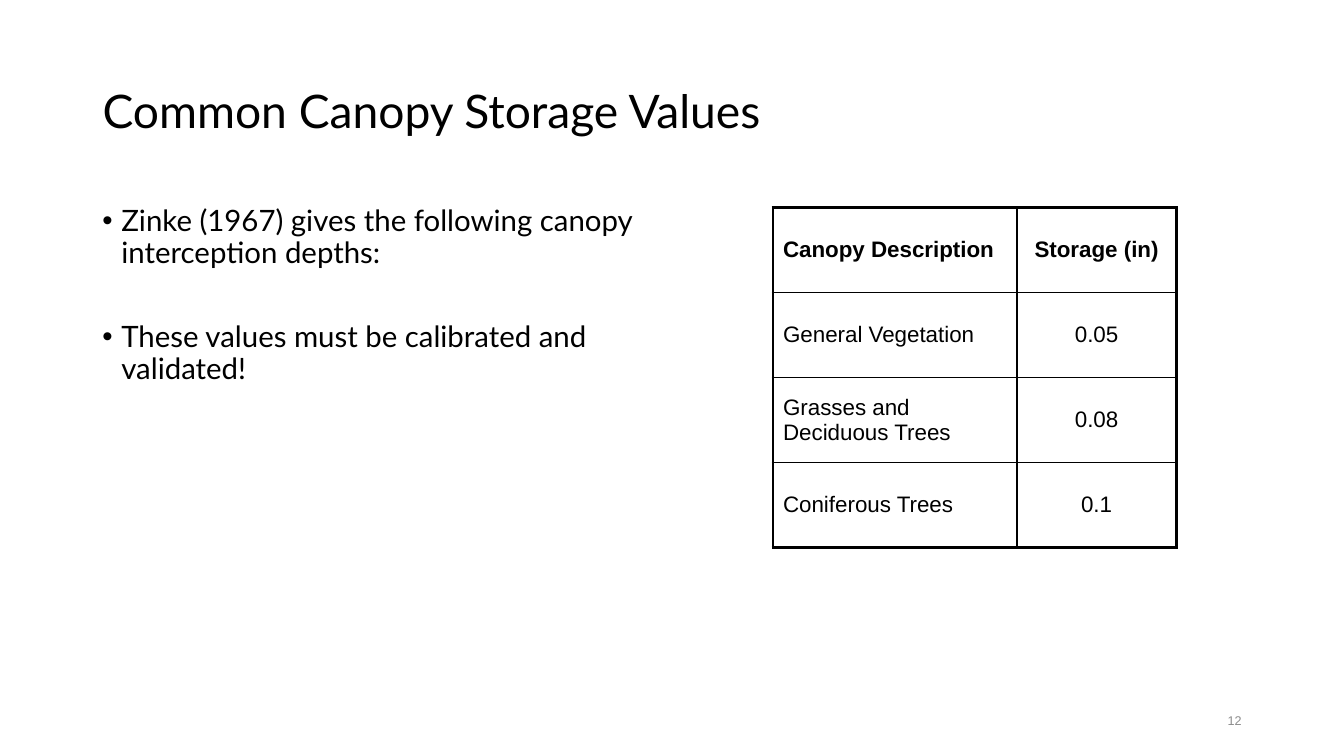
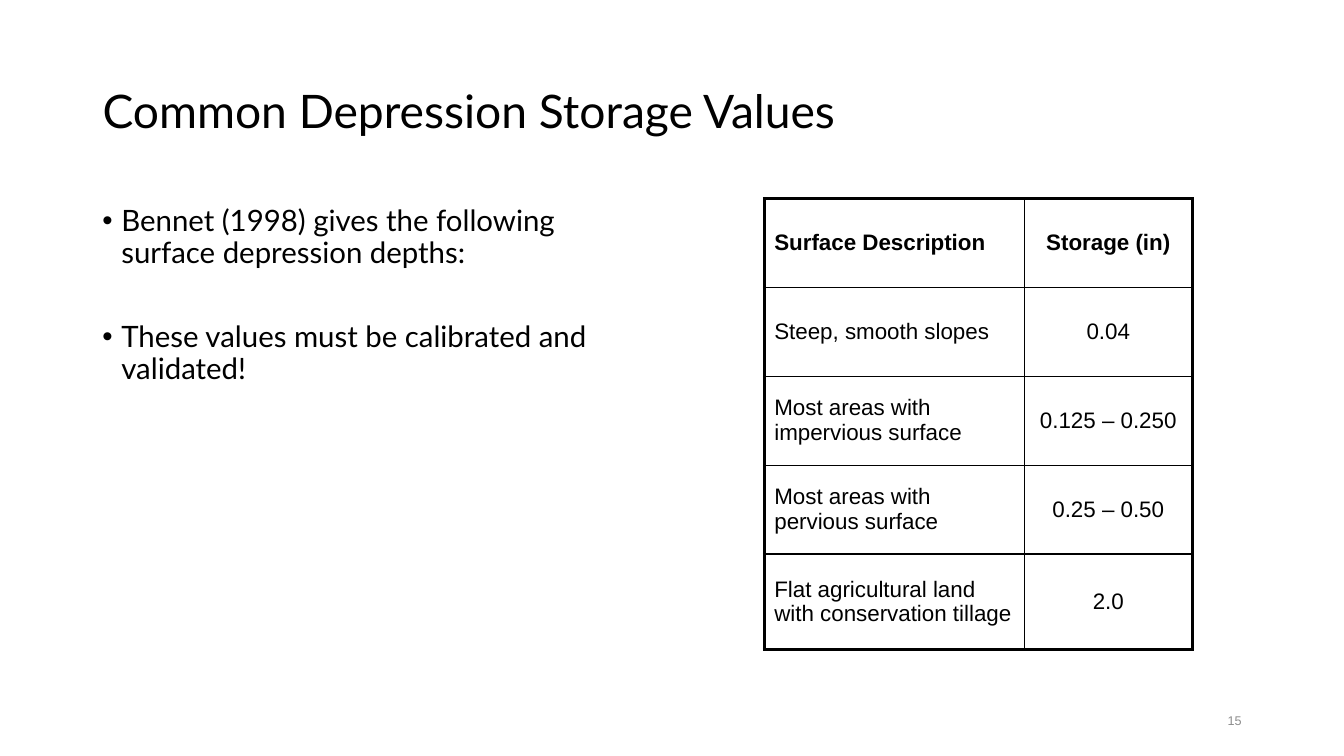
from dataclasses import dataclass

from lxml import etree
from pptx import Presentation
from pptx.dml.color import RGBColor
from pptx.enum import text as txt
from pptx.oxml import ns
from pptx.util import Cm, Pt


# Shared look
@dataclass(frozen=True)
class Theme:
    ink: str = "000000"
    gray: str = "8C8C8C"
    head: str = "Lato"
    base: str = "Arial"
    title: float = 33
    body: float = 21
    cell: float = 16
    foot: float = 9
    thick: float = 2.25
    thin: float = 1


THEME = Theme()
LEFT, MID, RIGHT = txt.PP_ALIGN.LEFT, txt.PP_ALIGN.CENTER, txt.PP_ALIGN.RIGHT
CLOSING = "These values must be calibrated and validated!"

# Table places, column widths and row heights are in centimetres
SLIDES = [
    dict(
        title="Common Canopy Storage Values",
        points=["Zinke (1967) gives the following canopy interception depths:", CLOSING],
        number="12",
        at=(19.48, 5.23), cols=(6.15, 4.01), rows=[2.14] * 4,
        data=[
            ("Canopy Description", "Storage (in)"),
            ("General Vegetation", "0.05"),
            ("Grasses and Deciduous Trees", "0.08"),
            ("Coniferous Trees", "0.1"),
        ],
    ),
    dict(
        title="Common Depression Storage Values",
        points=["Bennet (1998) gives the following surface depression depths:", CLOSING],
        number="15",
        at=(19.26, 5), cols=(6.55, 4.24), rows=[2.24] * 4 + [2.41],
        data=[
            ("Surface Description", "Storage (in)"),
            ("Steep, smooth slopes", "0.04"),
            ("Most areas with impervious surface", "0.125 – 0.250"),
            ("Most areas with pervious surface", "0.25 – 0.50"),
            ("Flat agricultural land with conservation tillage", "2.0"),
        ],
    ),
]


def style(para, face, size, color=THEME.ink, bold=False, align=LEFT):
    para.alignment = align
    for run in para.runs:
        font = run.font
        font.name, font.size, font.bold = face, Pt(size), bold
        font.color.rgb = RGBColor.from_string(color)


def add_title(slide, words):
    title = slide.shapes.title
    title.left, title.top, title.width, title.height = Cm(2.33), Cm(1.01), Cm(29.21), Cm(3.68)
    frame = title.text_frame
    frame.text = words
    frame.auto_size = txt.MSO_AUTO_SIZE.NONE
    frame.vertical_anchor = txt.MSO_ANCHOR.MIDDLE
    para = frame.paragraphs[0]
    para.line_spacing = 0.9
    style(para, THEME.head, THEME.title)


def add_box(slide, left, top, width, height, words):
    box = slide.shapes.add_textbox(Cm(left), Cm(top), Cm(width), Cm(height))
    frame = box.text_frame
    frame.word_wrap = True
    frame.text = words
    return frame


def add_points(slide, points):
    frame = add_box(slide, 2.33, 5.07, 14.4, 12.09, "\n".join(points))
    for i, para in enumerate(frame.paragraphs):
        props = para._p.get_or_add_pPr()
        props.set("marL", str(Cm(0.48)))
        props.set("indent", str(-Cm(0.48)))
        etree.SubElement(props, ns.qn("a:buFont"), typeface=THEME.base)
        etree.SubElement(props, ns.qn("a:buChar"), char="•")
        para.line_spacing = 0.9
        para.space_before = Pt(37.5 if i else 0)
        style(para, THEME.head, THEME.body)


def add_number(slide, number):
    frame = add_box(slide, 23.92, 17.65, 7.62, 1.01, number)
    frame.vertical_anchor = txt.MSO_ANCHOR.MIDDLE
    style(frame.paragraphs[0], THEME.base, THEME.foot, THEME.gray, align=RIGHT)


def set_edges(cell, edges):
    """Draw borders; edges maps L, R, T, B to whether that side is outer."""
    props = cell._tc.get_or_add_tcPr()
    for i, (side, outer) in enumerate(edges.items()):
        width = Pt(THEME.thick if outer else THEME.thin)
        line = etree.Element(ns.qn("a:ln" + side), w=str(width))
        fill = etree.SubElement(line, ns.qn("a:solidFill"))
        etree.SubElement(fill, ns.qn("a:srgbClr"), val=THEME.ink)
        props.insert(i, line)


def add_grid(slide, at, cols, rows, data):
    left, top = at
    grid = slide.shapes.add_table(
        len(rows), len(cols), Cm(left), Cm(top), Cm(sum(cols)), Cm(sum(rows))
    ).table
    grid.first_row = grid.horz_banding = False
    for col, width in zip(grid.columns, cols):
        col.width = Cm(width)
    for row, height in zip(grid.rows, rows):
        row.height = Cm(height)
    for r, line in enumerate(data):
        for c, words in enumerate(line):
            cell = grid.cell(r, c)
            cell.text_frame.text = words
            cell.vertical_anchor = txt.MSO_ANCHOR.MIDDLE
            cell.fill.background()
            style(cell.text_frame.paragraphs[0], THEME.base, THEME.cell,
                  bold=r == 0, align=MID if c else LEFT)
            set_edges(cell, dict(L=c == 0, R=c == len(cols) - 1,
                                 T=r == 0, B=r == len(rows) - 1))


def main():
    deck = Presentation()
    deck.slide_width, deck.slide_height = Cm(33.87), Cm(19.05)
    for item in SLIDES:
        slide = deck.slides.add_slide(deck.slide_layouts[5])
        add_title(slide, item["title"])
        add_points(slide, item["points"])
        add_number(slide, item["number"])
        add_grid(slide, item["at"], item["cols"], item["rows"], item["data"])
    deck.save("out.pptx")


if __name__ == "__main__":
    main()
